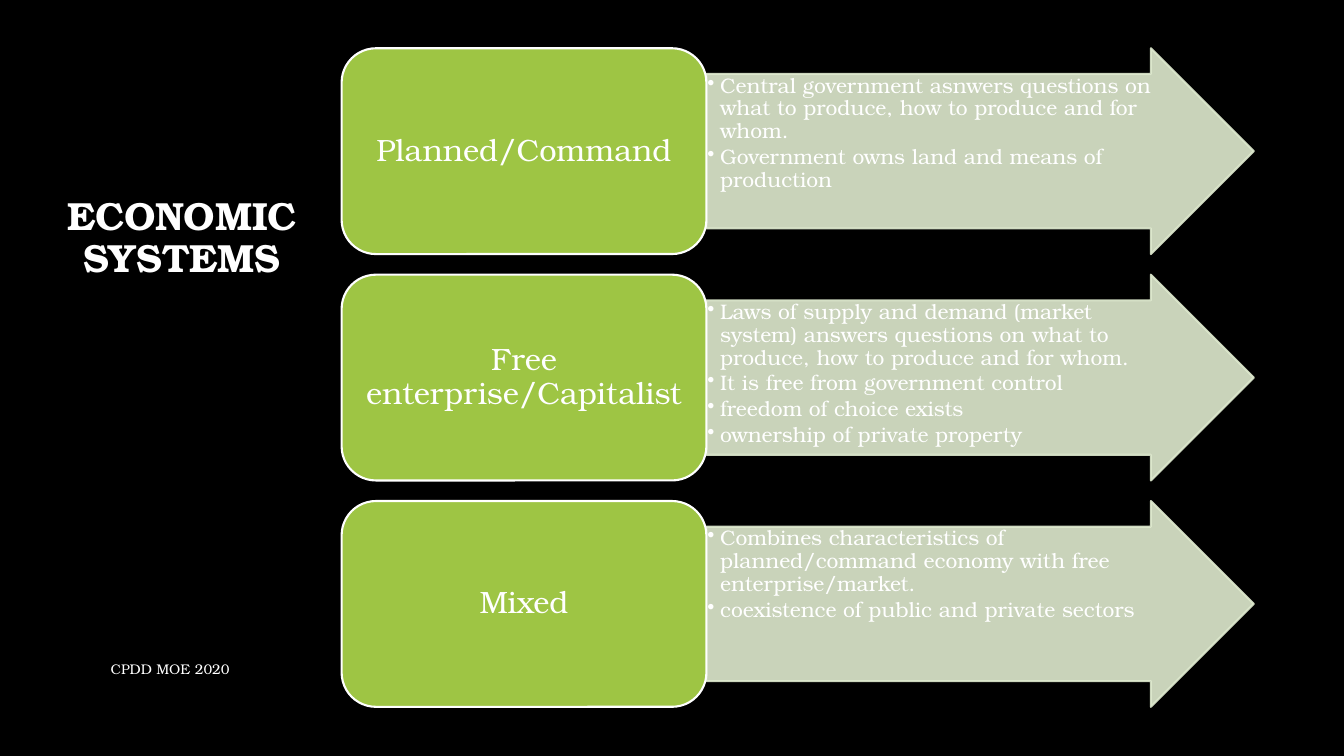
"""Build the slide on the three economic systems."""
from lxml.etree import SubElement
from pptx import Presentation
from pptx.dml.color import RGBColor
from pptx.enum.shapes import MSO_SHAPE
from pptx.enum.text import MSO_ANCHOR, MSO_AUTO_SIZE, PP_ALIGN
from pptx.oxml.ns import qn
from pptx.util import Pt

BLACK = RGBColor(0x00, 0x00, 0x00)
WHITE = RGBColor(0xFF, 0xFF, 0xFF)
GREEN = RGBColor(0x9E, 0xC5, 0x44)
PALE = RGBColor(0xDF, 0xEA, 0xCF)
FONT = "TeX Gyre Bonum"

SYSTEMS = [
    ("Planned/Command", [
        "Central government asnwers questions on what to produce, "
        "how to produce and for whom.",
        "Government owns land and means of production",
    ]),
    ("Free enterprise/Capitalist", [
        "Laws of supply and demand (market system) answers questions "
        "on what to produce, how to produce and for whom.",
        "It is free from government control",
        "freedom of choice exists",
        "ownership of private property",
    ]),
    ("Mixed", [
        "Combines characteristics of planned/command economy with "
        "free enterprise/market.",
        "coexistence of public and private sectors",
    ]),
]
TOP, STEP, HIGH = 34.5, 161.7, 147
LEFT, WIDE, REACH = 244, 260.6, 391


def write(para, text, size, align=PP_ALIGN.LEFT, bold=False):
    para.alignment = align
    run = para.add_run()
    run.text = text
    run.font.name = FONT
    run.font.size = Pt(size)
    run.font.bold = bold
    run.font.color.rgb = WHITE


def block(kind, left, top, width, fill, edge, pad, anchor):
    shape = slide.shapes.add_shape(
        kind, Pt(left), Pt(top), Pt(width), Pt(HIGH))
    shape.shadow.inherit = False
    shape.fill.solid()
    shape.fill.fore_color.rgb = fill
    shape.line.color.rgb = edge
    shape.line.width = Pt(1.5)
    frame = shape.text_frame
    frame.word_wrap = True
    frame.vertical_anchor = anchor
    frame.margin_left = frame.margin_right = Pt(pad[0])
    frame.margin_top = frame.margin_bottom = Pt(pad[1])
    return shape


deck = Presentation()
deck.slide_width, deck.slide_height = Pt(960), Pt(540)
slide = deck.slides.add_slide(deck.slide_layouts[5])
slide.background.fill.solid()
slide.background.fill.fore_color.rgb = BLACK

title = slide.shapes.title
title.left, title.top = Pt(37.5), Pt(48)
title.width, title.height = Pt(185), Pt(245)
frame = title.text_frame
frame.word_wrap = True
frame.auto_size = MSO_AUTO_SIZE.NONE
frame.vertical_anchor = MSO_ANCHOR.MIDDLE
para = frame.paragraphs[0]
para.line_spacing = 0.9
write(para, "ECONOMIC SYSTEMS", 28, PP_ALIGN.CENTER, True)

foot = slide.shapes.add_textbox(Pt(72), Pt(463), Pt(525.5), Pt(29))
foot.text_frame.word_wrap = True
foot.text_frame.vertical_anchor = MSO_ANCHOR.MIDDLE
write(foot.text_frame.paragraphs[0], "CPDD MOE 2020", 10)

for row, (name, points) in enumerate(SYSTEMS):
    top = TOP + row * STEP
    arrow = block(MSO_SHAPE.RIGHT_ARROW, LEFT + WIDE, top, REACH,
                  PALE, PALE, (0.8, 0.8), MSO_ANCHOR.TOP)
    arrow.adjustments[0] = 0.75
    arrow.adjustments[1] = 0.5
    for tint in arrow.element.spPr.iter(qn("a:srgbClr")):
        SubElement(tint, qn("a:alpha"), val="90000")
    frame = arrow.text_frame
    for num, point in enumerate(points):
        para = frame.add_paragraph() if num else frame.paragraphs[0]
        para.level = 1
        para.line_spacing = 0.9
        para.space_after = Pt(2.25)
        write(para, point, 15)
        props = para._p.get_or_add_pPr()
        props.set("marL", str(Pt(9)))
        props.set("indent", str(Pt(-9)))
        SubElement(props, qn("a:buChar"), char="•")

    card = block(MSO_SHAPE.ROUNDED_RECTANGLE, LEFT, top, WIDE,
                 GREEN, WHITE, (6.5, 3.6), MSO_ANCHOR.MIDDLE)
    para = card.text_frame.paragraphs[0]
    para.line_spacing = 0.9
    write(para, name, 22, PP_ALIGN.CENTER)

deck.save("out.pptx")
